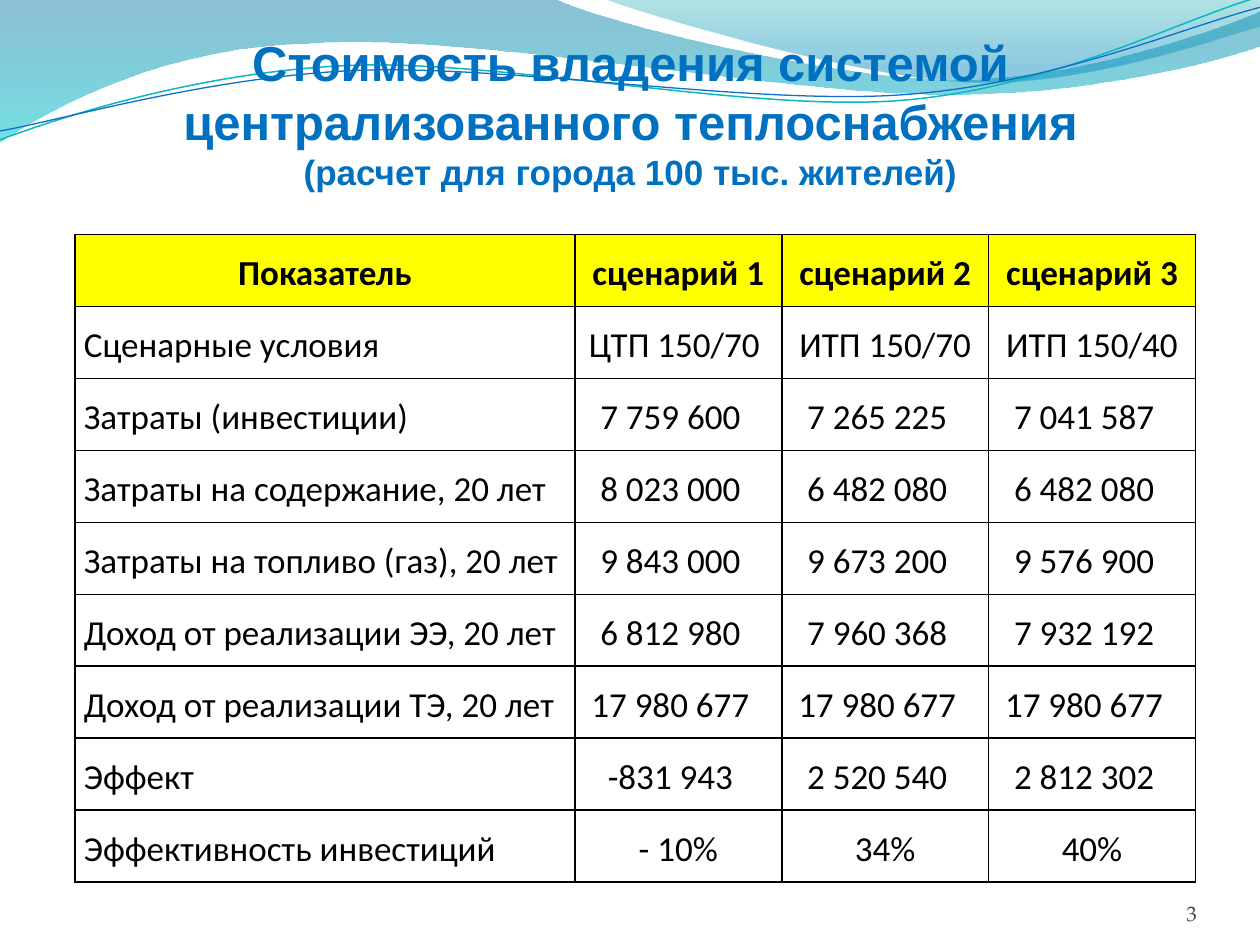
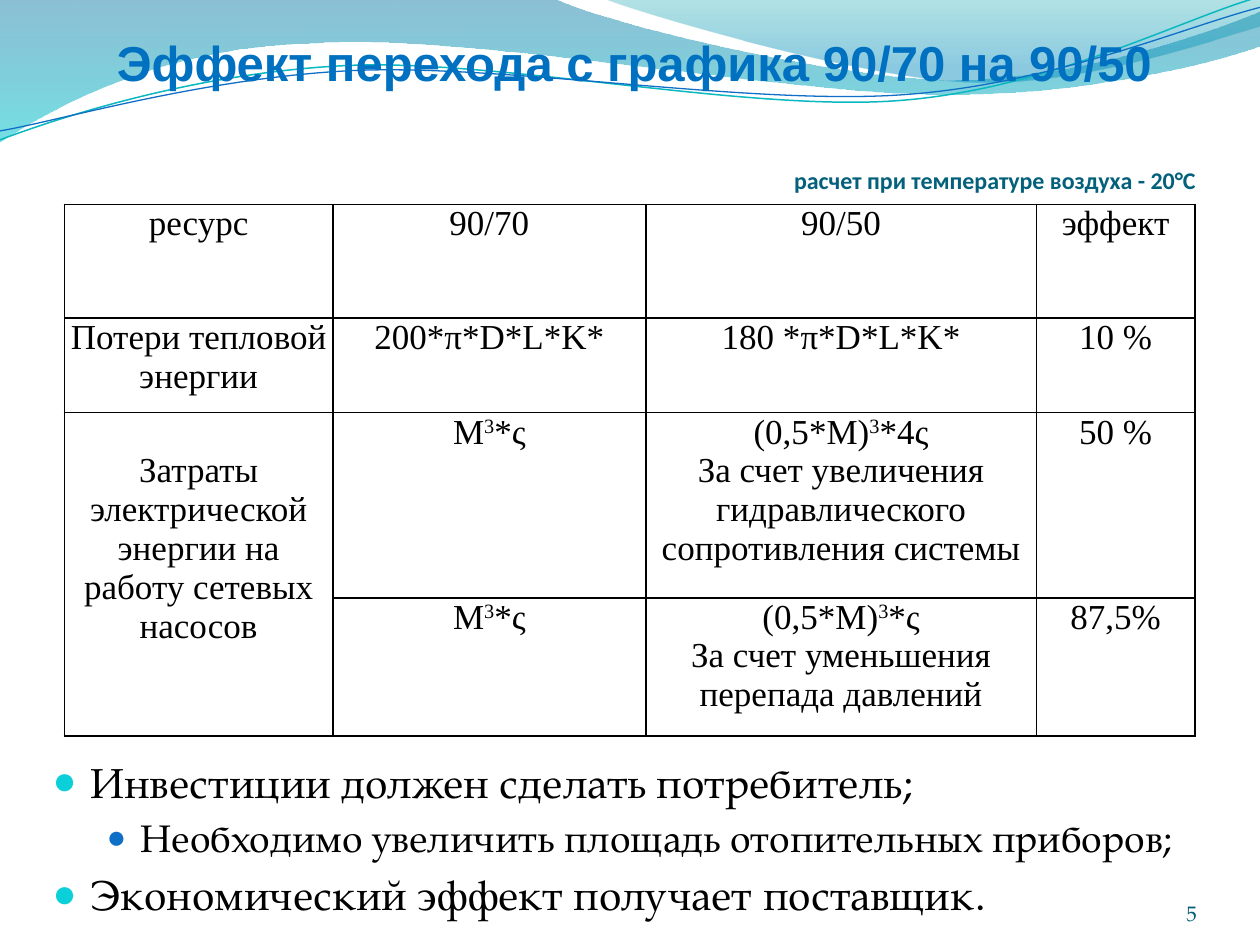
from lxml import etree
from pptx import Presentation
from pptx.dml.color import RGBColor
from pptx.enum.text import MSO_ANCHOR, MSO_AUTO_SIZE, PP_ALIGN
from pptx.oxml.ns import qn
from pptx.util import Cm, Pt

LEFT, CENTER, RIGHT = PP_ALIGN.LEFT, PP_ALIGN.CENTER, PP_ALIGN.RIGHT
TOP, MIDDLE, BOTTOM = MSO_ANCHOR.TOP, MSO_ANCHOR.MIDDLE, MSO_ANCHOR.BOTTOM
NO_AUTOFIT = MSO_AUTO_SIZE.NONE

COLORS = {
    "title": "0070C0", "text": "000000", "header": "FFFF00", "caption": "04617B",
    "number_grey": "464653", "number_teal": "045D75",
    "bullet_main": "0BD0D9", "bullet_sub": "0F6FC6",
    "wave_blue": "0074A1", "wave_cyan": "00C6CF",
    "crest_teal": "00A1A9", "crest_blue": "008BBF",
    "thread_teal": "0AB8BF", "thread_blue": "0F6FC6",
}
HEADING, TABLE_SANS, TABLE_SERIF, BODY = "Arial", "Calibri", "Times New Roman", "TeX Gyre Pagella"

# Header waves in cm: one point is a corner, three points are a Bezier curve
WAVE = [
    [(0, 0)], [(11.18, -0.03)],
    [(12.09, 0.43), (16.87, 1.6), (19.25, 1.6)],
    [(21.67, 1.6), (24.33, 0.66), (25.4, 0.23)],
    [(25.43, 0.91)],
    [(24.97, 1.12), (22.1, 1.93), (18.95, 1.9)],
    [(15.8, 1.9), (9.7, 0.71), (6.53, 0.86)],
    [(3.28, 0.91), (1.17, 2.11), (-0.03, 2.87)],
]
CREST = [
    [(12.17, -0.03)],
    [(12.93, 0.28), (17.32, 1.57), (19.53, 1.65)],
    [(21.74, 1.75), (24.41, 0.81), (25.4, 0.53)],
    [(25.4, 0)],
]
TEAL_THREAD = [
    [(0, 2.82)],
    [(1.22, 2.36), (4.01, 1.45), (7.04, 1.32)],
    [(10.03, 1.19), (15.06, 2.26), (18.11, 2.03)],
    [(21.16, 1.8), (23.83, 0.38), (25.35, -0.05)],
]
BLUE_THREAD = [
    [(0, 2.64)],
    [(1.19, 2.44), (4.17, 1.55), (7.19, 1.42)],
    [(10.24, 1.3), (15.16, 2.13), (18.21, 1.91)],
    [(21.23, 1.7), (23.9, 0.53), (25.4, 0.15)],
]

COSTS = [
    ["Показатель", "сценарий 1", "сценарий 2", "сценарий 3"],
    ["Сценарные условия", "ЦТП 150/70", "ИТП 150/70", "ИТП 150/40"],
    ["Затраты (инвестиции)", "7 759 600", "7 265 225", "7 041 587"],
    ["Затраты на содержание, 20 лет", "8 023 000", "6 482 080", "6 482 080"],
    ["Затраты на топливо (газ), 20 лет", "9 843 000", "9 673 200", "9 576 900"],
    ["Доход от реализации ЭЭ, 20 лет", "6 812 980", "7 960 368", "7 932 192"],
    ["Доход от реализации ТЭ, 20 лет", "17 980 677", "17 980 677", "17 980 677"],
    ["Эффект", "-831 943", "2 520 540", "2 812 302"],
    ["Эффективность инвестиций", "- 10%", "34%", "40%"],
]
# In this table ^3 stands for a raised 3 and \n starts a paragraph
SAVINGS = [
    ["ресурс", "90/70", "90/50", "эффект"],
    ["Потери тепловой энергии", "200*π*D*L*K*", "180 *π*D*L*K*", "10 %"],
    ["Затраты электрической энергии на работу сетевых насосов", "М^3*ς",
     "(0,5*М)^3*4ς\nЗа счет увеличения гидравлического сопротивления системы", "50 %"],
    ["", "М^3*ς", "(0,5*М)^3*ς\nЗа счет уменьшения перепада давлений", "87,5%"],
]
CONCLUSIONS = [
    (0, "Инвестиции должен сделать потребитель;"),
    (1, "Необходимо увеличить площадь отопительных приборов;"),
    (0, "Экономический эффект получает поставщик."),
]
# Level: size, text indent in cm, hanging in cm, bullet size, bullet colour
BULLETS = [(24, 0.76, 0.76, 95, "bullet_main"), (22, 1.78, 0.69, 85, "bullet_sub")]


def rgb(color):
    return RGBColor.from_string(COLORS[color])


def add_run(paragraph, text, size, font, color="text", bold=False):
    run = paragraph.add_run()
    run.text = text
    run.font.size, run.font.name, run.font.bold = Pt(size), font, bold
    run.font.color.rgb = rgb(color)
    return run


def set_frame(frame, anchor, insets):
    frame.word_wrap = True
    frame.auto_size = NO_AUTOFIT
    frame.vertical_anchor = anchor
    (frame.margin_left, frame.margin_top,
     frame.margin_right, frame.margin_bottom) = [Cm(inset) for inset in insets]


def place(shape, box):
    shape.left, shape.top, shape.width, shape.height = [Cm(length) for length in box]


# Header waves
def add_outline(shapes, outline, closed):
    """Draw the corner points, then bend the curved sides."""
    first, *rest = [(Cm(part[-1][0]), Cm(part[-1][1])) for part in outline]
    builder = shapes.build_freeform(*first)
    builder.add_line_segments(rest, close=closed)
    shape = builder.convert_to_shape()
    shape.shadow.inherit = False
    sides = list(shape._element.spPr.iter(qn("a:lnTo")))
    for side, part in zip(sides, outline[1:]):
        if len(part) == 3:
            curve = etree.Element(qn("a:cubicBezTo"))
            for x, y in part:
                etree.SubElement(curve, qn("a:pt"), x=str(Cm(x) - shape.left),
                                 y=str(Cm(y) - shape.top))
            side.getparent().replace(side, curve)
    return shape


def add_wave(shapes, outline, stops):
    wave = add_outline(shapes, outline, True)
    wave.line.fill.background()
    wave.fill.gradient()
    wave.fill.gradient_angle = 270
    for stop, (position, color, _) in zip(wave.fill.gradient_stops, stops):
        stop.position = position
        stop.color.rgb = rgb(color)
    for tint, (_, _, opacity) in zip(wave._element.spPr.iter(qn("a:srgbClr")), stops):
        etree.SubElement(tint, qn("a:alpha")).set("val", str(opacity * 1000))
    return wave


def add_thread(shapes, outline, color, width):
    thread = add_outline(shapes, outline, False)
    thread.fill.background()
    thread.line.color.rgb = rgb(color)
    thread.line.width = Pt(width)
    return thread


def add_header_waves(prs, slide):
    """Draw the waves and move them to the back of the master."""
    shapes = slide.shapes
    waves = [
        add_wave(shapes, WAVE, [(0, "wave_blue", 45), (1, "wave_cyan", 55)]),
        add_wave(shapes, CREST, [(0, "crest_teal", 30), (0.8, "crest_blue", 45)]),
        add_thread(shapes, TEAL_THREAD, "thread_teal", 0.85),
        add_thread(shapes, BLUE_THREAD, "thread_blue", 0.75),
    ]
    for depth, wave in enumerate(waves, start=2):
        prs.slide_master.shapes._spTree.insert(depth, wave._element)


# Titles, captions and lists
def set_title(slide, box, lines, right_inset=0):
    title = slide.shapes.title
    place(title, box)
    set_frame(title.text_frame, TOP, (0, 0.13, right_inset, 0))
    paragraph = title.text_frame.paragraphs[0]
    paragraph.alignment = CENTER
    for index, (text, size) in enumerate(lines):
        if index:
            paragraph.add_line_break()
        add_run(paragraph, text, size, HEADING, "title", True)


def add_label(slide, box, text, size, font, color, bold=False, top_inset=0):
    label = slide.shapes.add_textbox(*[Cm(length) for length in box])
    set_frame(label.text_frame, BOTTOM, (0, top_inset, 0, 0))
    paragraph = label.text_frame.paragraphs[0]
    paragraph.alignment = RIGHT
    add_run(paragraph, text, size, font, color, bold)


def add_slide_number(slide, number, color):
    add_label(slide, (22.02, 17.65, 2.11, 1.02), number, 12, BODY, color)


def set_bullet(paragraph, indent, hanging, percent, color):
    props = paragraph._p.get_or_add_pPr()
    props.set("marL", str(Cm(indent)))
    props.set("indent", str(-Cm(hanging)))
    tint = etree.SubElement(props, qn("a:buClr"))
    etree.SubElement(tint, qn("a:srgbClr")).set("val", COLORS[color])
    etree.SubElement(props, qn("a:buSzPct")).set("val", str(percent * 1000))
    etree.SubElement(props, qn("a:buChar")).set("char", "●")


def fill_list(body, box, items):
    place(body, box)
    frame = body.text_frame
    set_frame(frame, TOP, (0.25, 0.13, 0.25, 0.13))
    for index, (level, text) in enumerate(items):
        paragraph = frame.add_paragraph() if index else frame.paragraphs[0]
        size, *bullet = BULLETS[level]
        paragraph.level = level
        paragraph.alignment = LEFT
        set_bullet(paragraph, *bullet)
        add_run(paragraph, text, size, BODY)


# Tables
def set_borders(cell):
    props = cell._tc.get_or_add_tcPr()
    for side in ("a:lnL", "a:lnR", "a:lnT", "a:lnB"):
        border = etree.SubElement(props, qn(side), w=str(Pt(1)))
        paint = etree.SubElement(border, qn("a:solidFill"))
        etree.SubElement(paint, qn("a:srgbClr")).set("val", COLORS["text"])


def add_grid(slide, left, top, widths, heights):
    table = slide.shapes.add_table(
        len(heights), len(widths), Cm(left), Cm(top),
        Cm(sum(widths)), Cm(sum(heights))).table
    table.first_row = table.horz_banding = False
    for column, width in zip(table.columns, widths):
        column.width = Cm(width)
    for row, height in zip(table.rows, heights):
        row.height = Cm(height)
    return table


def format_cell(cell, side_inset, anchor, fill=None):
    set_borders(cell)
    cell.margin_left = cell.margin_right = Cm(side_inset)
    cell.margin_top = cell.margin_bottom = 0
    cell.vertical_anchor = anchor
    if fill:
        cell.fill.solid()
        cell.fill.fore_color.rgb = rgb(fill)
    else:
        cell.fill.background()


def add_cost_table(slide):
    table = add_grid(slide, 1.51, 4.73, [10.08] + [4.17] * 3, [1.45] * len(COSTS))
    for r, row in enumerate(COSTS):
        for c, text in enumerate(row):
            cell, header = table.cell(r, c), r == 0
            format_cell(cell, 0.18, MIDDLE, "header" if header else None)
            if c and 2 <= r <= 7:  # money stands a little left of centre
                cell.margin_right = Cm(0.5)
            paragraph = cell.text_frame.paragraphs[0]
            paragraph.alignment = CENTER if header or c else LEFT
            paragraph.line_spacing = 1.15
            add_run(paragraph, text, 20, TABLE_SANS, bold=header)
    table.cell(1, 1).margin_right = Cm(0.34)


def add_formula(paragraph, text):
    base, *raised = text.split("^")
    add_run(paragraph, base, 20, TABLE_SERIF)
    for part in raised:
        power = add_run(paragraph, part[0], 20, TABLE_SERIF)
        power._r.get_or_add_rPr().set("baseline", "30000")
        add_run(paragraph, part[1:], 20, TABLE_SERIF)


def add_savings_table(slide):
    table = add_grid(slide, 1.3, 4.12, [5.41, 6.31, 7.87, 3.2], [2.29, 1.91, 3.73, 2.79])
    for r, row in enumerate(SAVINGS):
        for c, text in enumerate(row):
            cell = table.cell(r, c)
            format_cell(cell, 0.05, TOP)
            for index, line in enumerate(text.split("\n") if text else []):
                frame = cell.text_frame
                paragraph = frame.add_paragraph() if index else frame.paragraphs[0]
                paragraph.alignment = CENTER
                add_formula(paragraph, line)
    pump_costs = table.cell(2, 0)
    pump_costs.merge(table.cell(3, 0))
    pump_costs.margin_top = Cm(0.78)


def main():
    prs = Presentation()
    prs.slide_width, prs.slide_height = Cm(25.4), Cm(19.05)

    # Cost of ownership
    costs = prs.slides.add_slide(prs.slide_layouts[5])
    add_header_waves(prs, costs)
    set_title(costs, (0.71, 0.53, 24, 3.2), [
        ("Стоимость владения системой централизованного теплоснабжения", 28),
        ("(расчет для города 100 тыс. жителей)", 20)])
    add_slide_number(costs, "3", "number_grey")
    add_cost_table(costs)

    # Effect of the new temperature schedule
    savings = prs.slides.add_slide(prs.slide_layouts[1])
    set_title(savings, (2.31, 0.53, 21.79, 2.39),
              [("Эффект перехода с графика 90/70 на 90/50", 28)], 0.84)
    add_savings_table(savings)
    add_label(savings, (14.71, 3.12, 9.4, 0.79), "расчет при температуре воздуха - 20°C",
              13.7, TABLE_SANS, "caption", True, 0.13)
    add_slide_number(savings, "5", "number_teal")
    fill_list(savings.placeholders[1], (0.81, 15.11, 23.8, 3.73), CONCLUSIONS)

    prs.save("out.pptx")


if __name__ == "__main__":
    main()
